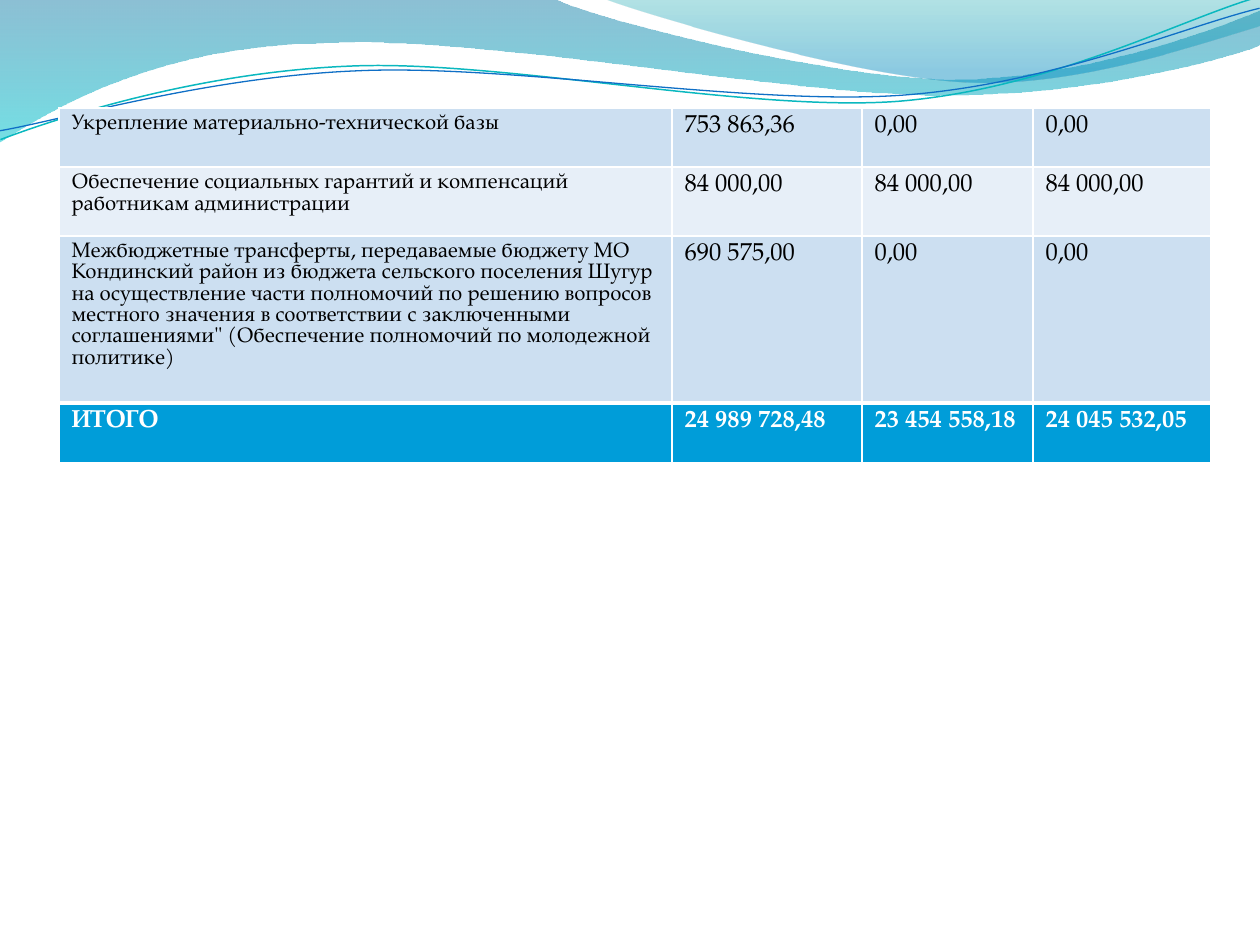
"""Build the budget table slide with its wave header."""
from lxml import etree
from pptx import Presentation, util as u
from pptx.dml.color import RGBColor
from pptx.oxml.ns import qn

THEME = {
    "font": "TeX Gyre Pagella", "label": 12, "number": 14, "leading": 1.015,
    "text": "000000", "white": "FFFFFF", "total": "009DD9",
    "bands": ["CCDFF1", "E7EFF8"], "border": 1, "total_border": 3,
}


def px(value):
    return round(value * 914400 / 126)


def draw_path(parent, start, segments, close):
    points = [segment[i:i + 2] for segment in segments for i in range(0, len(segment), 2)]
    builder = parent.shapes.build_freeform(px(start[0]), px(start[1]), scale=1.0)
    builder.add_line_segments([(px(x), px(y)) for x, y in points], close=close)
    shape = builder.convert_to_shape()
    shape.shadow.inherit = False
    lines = iter(list(shape._element.spPr.iter(qn("a:lnTo"))))
    for segment in segments:
        first = next(lines)
        if len(segment) == 6:
            first.tag = qn("a:cubicBezTo")
            for line in (next(lines), next(lines)):
                first.append(line[0])
                line.getparent().remove(line)
    return shape


presentation = Presentation()
presentation.slide_width, presentation.slide_height = px(1260), px(945)
slide = presentation.slides.add_slide(presentation.slide_layouts[6])

waves = [
    ((0, 0), [(554, -1), (600, 21, 837, 79, 955, 79), (1075, 79, 1207, 33, 1260, 11),
              (1261, 45), (1239, 55, 1096, 96, 940, 95), (784, 95, 481, 35, 324, 43),
              (163, 45, 58, 105, -1, 142), (0, 0)],
     [(0, "0074A1", 45), (1, "00C6CF", 55)]),
    ((604, -1), [(641, 14, 859, 78, 969, 82), (1079, 87, 1211, 40, 1260, 26),
                 (1260, 0), (604, -1)],
     [(0, "00A1A9", 30), (0.8, "008BBF", 45)]),
]
for start, segments, stops in waves:
    shape = draw_path(slide, start, segments, True)
    shape.line.fill.background()
    shape.fill.gradient()
    shape.fill.gradient_angle = 270
    for stop, (position, color, _) in zip(shape.fill.gradient_stops, stops):
        stop.position = position
        stop.color.rgb = RGBColor.from_string(color)
    for color, (_, _, opacity) in zip(shape._element.spPr.iter(qn("a:srgbClr")), stops):
        etree.SubElement(color, qn("a:alpha"), val=str(opacity * 1000))

strands = [
    ((-2, 110), [(59, 90, 200, 52, 350, 53), (499, 53, 745, 118, 896, 114),
                 (1049, 109, 1184, 45, 1260, 27)], "0AB8BF", 0.85),
    ((-2, 101), [(57, 94, 207, 57, 357, 58), (509, 58, 750, 112, 902, 108),
                 (1052, 104, 1188, 52, 1262, 38)], "0F6FC6", 0.75),
]
strand_group = slide.shapes.add_group_shape()
for start, segments, color, width in strands:
    shape = draw_path(strand_group, start, segments, False)
    shape.rotation = 357.3
    shape.fill.background()
    shape.line.color.rgb = RGBColor.from_string(color)
    shape.line.width = u.Pt(width)

rows = [
    ("Укрепление материально-технической базы", "753 863,36", "0,00", "0,00"),
    ("Обеспечение социальных гарантий и компенсаций работникам администрации",
     "84 000,00", "84 000,00", "84 000,00"),
    ("Межбюджетные трансферты, передаваемые бюджету МО Кондинский район из бюджета "
     "сельского поселения Шугур на осуществление части полномочий по решению вопросов "
     "местного значения в соответствии с заключенными соглашениями\" "
     "(Обеспечение полномочий по молодежной политике)", "690 575,00", "0,00", "0,00"),
    ("ИТОГО", "24 989 728,48", "23 454 558,18", "24 045 532,05"),
]
widths, heights = [613, 190, 171, 178], [59, 69, 167, 60]
total_row = len(rows) - 1
table = slide.shapes.add_table(len(rows), len(widths), px(59), px(108),
                               px(sum(widths)), px(sum(heights))).table
table.first_row = table.horz_banding = False
for column, width in zip(table.columns, widths):
    column.width = px(width)
for row, height in zip(table.rows, heights):
    row.height = px(height)

for row_index, values in enumerate(rows):
    is_total = row_index == total_row
    fill = THEME["total"] if is_total else THEME["bands"][row_index % 2]
    borders = dict.fromkeys(["lnL", "lnR", "lnT", "lnB"], THEME["border"])
    if is_total:
        borders["lnT"] = THEME["total_border"]
    elif row_index == total_row - 1:
        borders["lnB"] = THEME["total_border"]
    for column_index, value in enumerate(values):
        cell = table.cell(row_index, column_index)
        cell.fill.solid()
        cell.fill.fore_color.rgb = RGBColor.from_string(fill)
        size = THEME["label"] if column_index == 0 and not is_total else THEME["number"]
        paragraph = cell.text_frame.paragraphs[0]
        paragraph.line_spacing = u.Pt(size * THEME["leading"])
        if is_total and column_index == 1:
            paragraph._p.get_or_add_pPr().set("marL", str(px(48)))
            paragraph._p.get_or_add_pPr().set("indent", str(px(-48)))
        run = paragraph.add_run()
        run.text = value
        for name, setting in {"name": THEME["font"], "size": u.Pt(size), "bold": is_total}.items():
            setattr(run.font, name, setting)
        run.font.color.rgb = RGBColor.from_string(THEME["white" if is_total else "text"])
        properties = cell._tc.get_or_add_tcPr()
        for position, (side, width) in enumerate(borders.items()):
            line = etree.Element(qn(f"a:{side}"), w=str(u.Pt(width)))
            solid = etree.SubElement(line, qn("a:solidFill"))
            etree.SubElement(solid, qn("a:srgbClr"), val=THEME["white"])
            properties.insert(position, line)

presentation.save("out.pptx")
